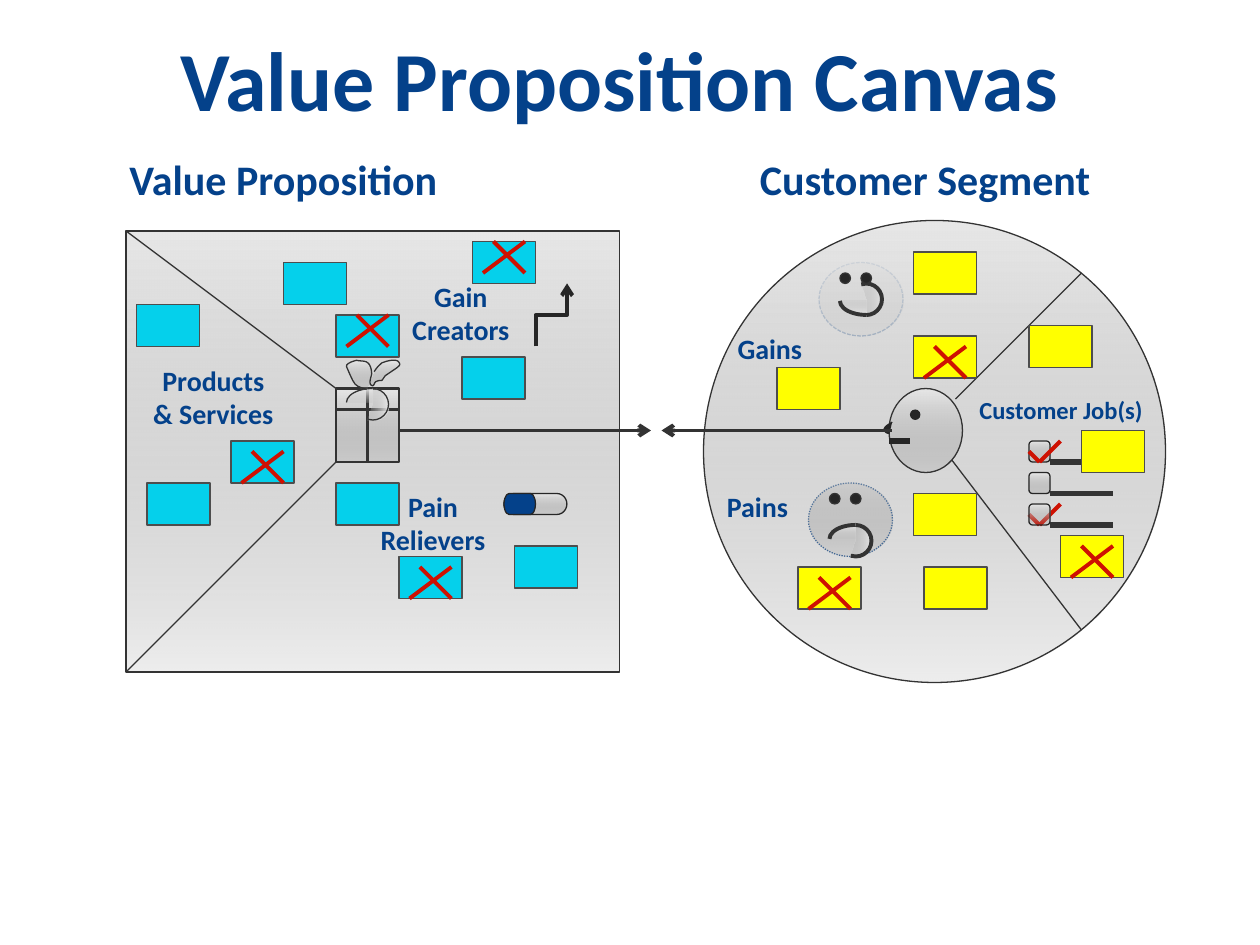
"""Build the Value Proposition Canvas slide."""
from dataclasses import dataclass
from typing import Optional

from lxml.etree import SubElement
from pptx import Presentation
from pptx.dml.color import RGBColor
from pptx.enum.dml import MSO_LINE
from pptx.enum.shapes import MSO_CONNECTOR, MSO_SHAPE
from pptx.enum.text import PP_ALIGN
from pptx.oxml.ns import qn
from pptx.util import Pt

NAVY = RGBColor(0x04, 0x41, 0x8A)
CYAN = RGBColor(0x05, 0xD0, 0xEB)
YELLOW = RGBColor(0xFF, 0xFF, 0x00)
RED = RGBColor(0xCE, 0x11, 0x02)
BLACK = RGBColor(0x26, 0x26, 0x26)
DARK = RGBColor(0x33, 0x33, 0x33)
EDGE = RGBColor(0x4D, 0x4D, 0x4D)
SILVER = RGBColor(0xE7, 0xE7, 0xE7)
GREY = RGBColor(0x8C, 0x8C, 0x8C)

BOW_START = (209.5, 222.5)
BOW_CURVES = [
    (202.3, 220.3, 203, 221, 198, 209.5), (197.3, 207.4, 203.8, 205.9, 203.8, 205.9),
    (205.9, 206.6, 208.8, 205.9, 210.2, 207.4), (212.4, 208.8, 212.4, 213.8, 212.4, 213.8),
    (212.4, 214.6, 210.2, 219.6, 212.4, 220.3), (213.8, 221, 213.8, 218.9, 214.6, 218.2),
    (216, 217.4, 217.4, 217.4, 218.2, 217.4), (218.9, 216.7, 219.6, 215.3, 220.3, 214.6),
    (222.5, 213.1, 226.8, 210.2, 226.8, 210.2), (227.5, 209.5, 229, 208.8, 228.2, 207.4),
    (227.5, 205.9, 226.1, 205.9, 224.6, 205.9), (222.5, 205.9, 220.3, 206.6, 218.2, 207.4),
    (217.4, 208.1, 216.7, 208.8, 216, 209.5), (215.3, 210.2, 213.8, 212.4, 213.8, 212.4),
]
NOSE_START = (509.8, 241.2)
NOSE_CURVES = [(509, 241.9, 504, 244.1, 505.4, 246.2), (506.2, 247.7, 508.3, 247.7, 508.3, 247.7)]

YELLOW_NOTES = [(588, 186), (618, 246), (606, 306), (522, 192), (522, 144),
                (444, 210), (456, 324), (522, 282), (528, 324)]
CYAN_NOTES = [(78, 174), (132, 252), (192, 180), (270, 138), (264, 204),
              (84, 276), (192, 276), (228, 318), (294, 312), (162, 150)]
CROSSES = [(276, 138), (234, 324), (462, 330), (528, 198), (612, 312), (198, 180), (138, 258)]
EYES = [(492, 156), (480, 156), (486, 282), (474, 282)]


@dataclass
class Label:
    lines: list[str]
    left: float
    top: float
    width: float
    height: float
    size: float = 16
    centred: bool = True


@dataclass
class Outline:
    color: RGBColor = DARK
    width: float = 0.75
    dash: Optional[MSO_LINE] = None


def paint(shape, fill: Optional[RGBColor], outline: Optional[Outline]) -> None:
    """Fill a shape, with the silver gradient when no colour is given."""
    shape.shadow.inherit = False
    if fill is None:
        shape.fill.gradient()
        shape.fill.gradient_angle = 270
        stops = shape.fill.gradient_stops
        for stop, color, position in zip(stops, (SILVER, GREY), (0, 1)):
            stop.color.rgb = color
            stop.position = position
        color_element = shape._element.spPr.findall(".//" + qn("a:srgbClr"))[-1]
        SubElement(color_element, qn("a:alpha"), val="15000")
    else:
        shape.fill.solid()
        shape.fill.fore_color.rgb = fill
    if outline is None:
        shape.line.fill.background()
        return
    shape.line.color.rgb = outline.color
    shape.line.width = Pt(outline.width)
    if outline.dash is not None:
        shape.line.dash_style = outline.dash


def add_figure(shapes, kind: MSO_SHAPE, left: float, top: float, width: float, height: float,
               fill: Optional[RGBColor] = None, outline: Optional[Outline] = Outline()):
    """Add a painted preset shape."""
    shape = shapes.add_shape(kind, Pt(left), Pt(top), Pt(width), Pt(height))
    paint(shape, fill, outline)
    return shape


def add_line(shapes, start: tuple[float, float], end: tuple[float, float], color: RGBColor = DARK,
             width: float = 0.75, arrow: str = "", kind: MSO_CONNECTOR = MSO_CONNECTOR.STRAIGHT):
    """Add a connector, with an arrow at headEnd or tailEnd if asked."""
    connector = shapes.add_connector(kind, *map(Pt, start + end))
    connector.line.color.rgb = color
    connector.line.width = Pt(width)
    properties = connector._element.spPr
    if arrow:
        SubElement(properties.find(qn("a:ln")), qn("a:" + arrow), type="arrow")
    SubElement(properties, qn("a:effectLst"))
    return connector


def add_label(shapes, label: Label) -> None:
    """Add a bold navy label, one paragraph a line."""
    box = shapes.add_textbox(Pt(label.left), Pt(label.top), Pt(label.width), Pt(label.height))
    frame = box.text_frame
    frame.word_wrap = not label.centred
    frame.text = "\n".join(label.lines)
    for paragraph in frame.paragraphs:
        paragraph.alignment = PP_ALIGN.CENTER if label.centred else PP_ALIGN.LEFT
        font = paragraph.font
        font.name, font.size, font.bold = "Calibri", Pt(label.size), True
        font.color.rgb = NAVY


def add_curve(shapes, start: tuple[float, float], curves: list, fill: Optional[RGBColor],
              color: RGBColor) -> None:
    """Add an open outline that follows cubic curves in short steps."""
    points, (x, y), steps = [], start, 6
    for x1, y1, x2, y2, x3, y3 in curves:
        for step in range(1, steps + 1):
            t = step / steps
            weights = ((1 - t) ** 3, 3 * t * (1 - t) ** 2, 3 * t * t * (1 - t), t ** 3)
            points.append(tuple(Pt(sum(w * v for w, v in zip(weights, values)))
                                for values in ((x, x1, x2, x3), (y, y1, y2, y3))))
        x, y = x3, y3
    builder = shapes.build_freeform(Pt(start[0]), Pt(start[1]), scale=1.0)
    builder.add_line_segments(points, close=False)
    paint(builder.convert_to_shape(), fill, Outline(color))


def add_arc_pair(shapes, left: float, top: float, width: float, upturned: bool = False) -> None:
    """Add two joined arcs, bulging up or, when upturned, down."""
    first_top = top + 2 if upturned else top
    outline = Outline(width=width)
    first = add_figure(shapes, MSO_SHAPE.ARC, left, first_top, 30, 16, outline=outline)
    second = add_figure(shapes, MSO_SHAPE.ARC, left + 6, top, 18, 18, outline=outline)
    second.rotation = 270 if upturned else 90
    second.adjustments[0] = 96.95
    second.adjustments[1] = 0
    for arc in (first, second):
        transform = arc._element.spPr.find(qn("a:xfrm"))
        transform.set("flipH", "1")
        if upturned:
            transform.set("flipV", "1")


def add_tick(shapes, left: float, top: float) -> None:
    """Add a red tick."""
    add_line(shapes, (left, top + 6), (left + 6, top + 12), RED, 2.25)
    add_line(shapes, (left + 6, top + 12), (left + 18, top), RED, 2.25)


def main() -> None:
    """Draw the canvas and save it."""
    presentation = Presentation()
    presentation.slide_width, presentation.slide_height = Pt(720), Pt(540)
    shapes = presentation.slides.add_slide(presentation.slide_layouts[6]).shapes
    oval, rectangle = MSO_SHAPE.OVAL, MSO_SHAPE.RECTANGLE

    add_figure(shapes, oval, 468, 150, 48, 42, outline=Outline(NAVY, dash=MSO_LINE.SQUARE_DOT))
    add_figure(shapes, oval, 462, 276, 48, 42, outline=Outline(NAVY, dash=MSO_LINE.ROUND_DOT))
    add_label(shapes, Label(["Value Proposition Canvas"], 96, 12, 540, 65.5, 48, False))
    add_figure(shapes, oval, 402, 126, 264, 264)
    add_figure(shapes, rectangle, 72, 132, 282, 252)
    add_label(shapes, Label(["Value Proposition"], 66, 84, 192, 36, 24))
    add_label(shapes, Label(["Customer Segment"], 426, 84, 205.2, 36, 24))

    add_figure(shapes, rectangle, 192, 222, 36, 42, outline=Outline(width=1.5))
    add_line(shapes, (210, 222), (210, 264), width=1.5)
    add_line(shapes, (192, 234), (228, 234), width=1.5)
    add_arc_pair(shapes, 198, 222, 0.75)
    add_curve(shapes, BOW_START, BOW_CURVES, None, DARK)
    add_line(shapes, (72, 132), (192, 222))
    add_line(shapes, (72, 384), (192, 264))
    add_line(shapes, (228, 246), (372, 246), width=2.25, arrow="tailEnd")

    add_figure(shapes, oval, 508, 222, 42, 48)
    add_figure(shapes, oval, 520, 234, 6, 6, BLACK, None)
    add_line(shapes, (508, 252), (520, 252), BLACK, 3)
    add_curve(shapes, NOSE_START, NOSE_CURVES, BLACK, BLACK)
    add_line(shapes, (378, 246), (510, 246), width=2.25, arrow="headEnd")
    add_line(shapes, (546, 228), (618, 156))
    add_line(shapes, (544, 263), (618, 360))
    add_label(shapes, Label(["Customer Job(s)"], 552, 222, 108.7, 24.5, 14))

    add_tick(shapes, 588, 288)
    for top in (288, 270, 252):
        add_figure(shapes, MSO_SHAPE.ROUNDED_RECTANGLE, 588, top, 12, 12, outline=Outline(BLACK))
        add_line(shapes, (600, top + 12), (636, top + 12), width=3)
    add_tick(shapes, 588, 252)

    add_arc_pair(shapes, 474, 300, 2.25)
    add_arc_pair(shapes, 480, 162, 2.25, upturned=True)
    for left, top in EYES:
        add_figure(shapes, oval, left, top, 6, 6, BLACK)
    for label in (Label(["Pains"], 408, 276, 49.7, 26.6), Label(["Gains"], 414, 186, 51.8, 26.6),
                  Label(["Products", "& Services"], 78, 204, 87.8, 46),
                  Label(["Gain", "Creators"], 228, 156, 70.6, 46),
                  Label(["Pain", "Relievers"], 210, 276, 74.9, 46)):
        add_label(shapes, label)
    stairs = add_line(shapes, (333, 189), (297, 171), BLACK, 2.25, "tailEnd", MSO_CONNECTOR.ELBOW)
    stairs._element.spPr.find(qn("a:xfrm")).set("rot", "5400000")
    for width, fill in ((36, None), (18, NAVY)):
        add_figure(shapes, MSO_SHAPE.FLOWCHART_TERMINATOR, 288, 282, width, 12, fill, Outline(BLACK))

    for color, notes in ((YELLOW, YELLOW_NOTES), (CYAN, CYAN_NOTES)):
        for left, top in notes:
            add_figure(shapes, rectangle, left, top, 36, 24, color, Outline(EDGE))
    for left, top in CROSSES:
        add_line(shapes, (left, top + 18), (left + 24, top), RED, 2.25)
        add_line(shapes, (left + 6, top), (left + 24, top + 18), RED, 2.25)
    presentation.save("out.pptx")


if __name__ == "__main__":
    main()
